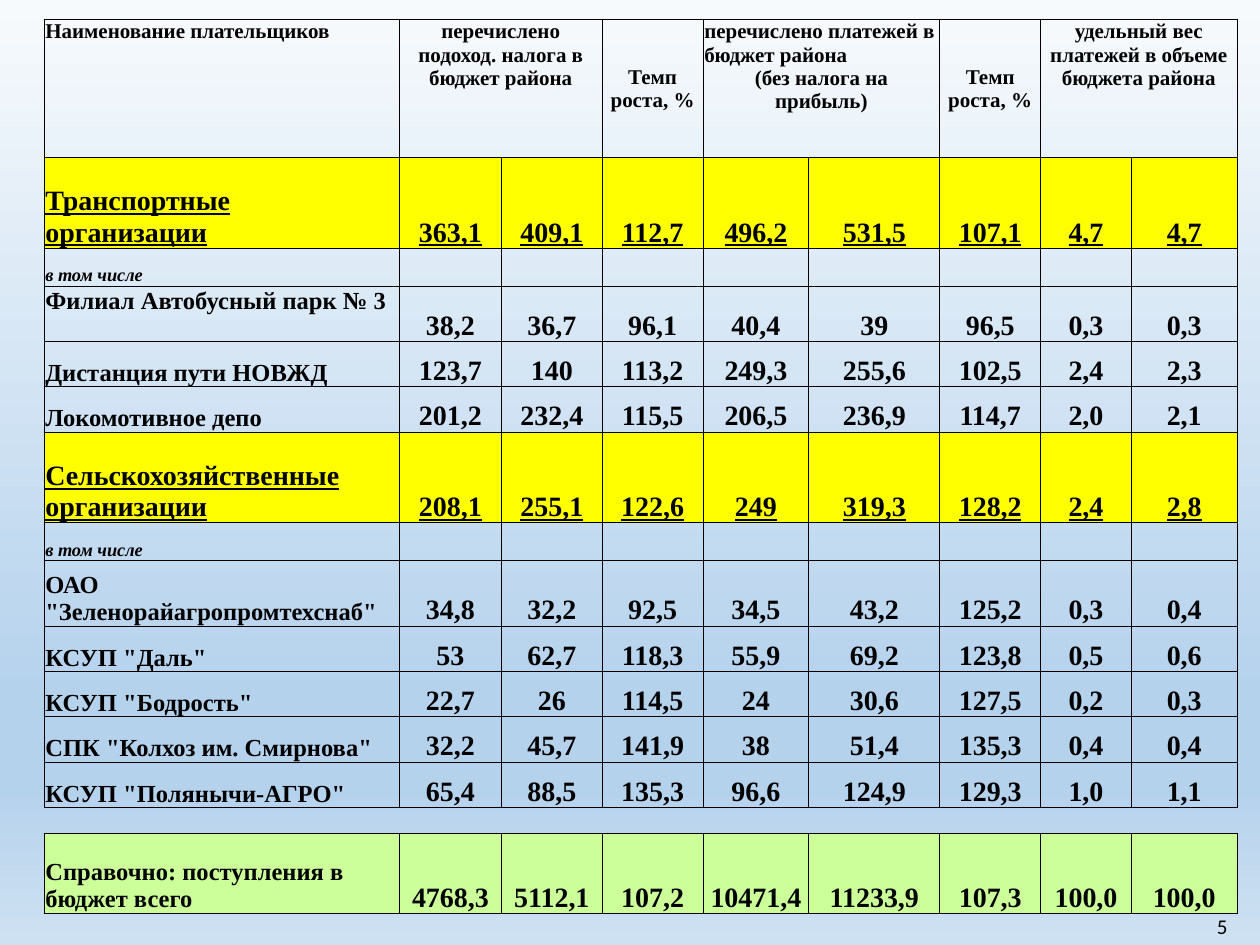
from lxml import etree
from pptx import Presentation
from pptx.dml.color import RGBColor
from pptx.enum.text import MSO_ANCHOR, PP_ALIGN
from pptx.oxml import parse_xml
from pptx.oxml.ns import qn
from pptx.util import Inches, Pt

LEFT, CENTER, RIGHT = PP_ALIGN.LEFT, PP_ALIGN.CENTER, PP_ALIGN.RIGHT
TOP, MIDDLE, BOTTOM = MSO_ANCHOR.TOP, MSO_ANCHOR.MIDDLE, MSO_ANCHOR.BOTTOM
BLACK, YELLOW, GREEN = "000000", "FFFF00", "CCFF99"
SERIF, SANS = "Times New Roman", "Calibri"

BACKGROUND = [(0, "F7FAFD"), (74, "B5D2EC"), (83, "B5D2EC"), (100, "CEE1F2")]
COL_WIDTHS = [2.82, 0.81, 0.8, 0.8, 0.84, 1.04, 0.8, 0.72, 0.84]

# Header: column, columns spanned, anchor, paragraphs with their alignment
HEADER_HEIGHT = 1.1
HEADER = [
    (0, 1, TOP, [("Наименование плательщиков", LEFT)]),
    (1, 2, TOP, [("перечислено подоход. налога в бюджет района", CENTER)]),
    (3, 1, MIDDLE, [("Темп роста, %", CENTER)]),
    (4, 2, TOP, [("перечислено платежей в бюджет района", LEFT),
                 ("(без налога на\vприбыль)", CENTER)]),
    (6, 1, MIDDLE, [("Темп роста, %", CENTER)]),
    (7, 2, TOP, [("удельный вес платежей в объеме бюджета района", CENTER)]),
]

# Row kind: label size, underline, italic, fill
KINDS = {
    "group": (16, True, False, YELLOW),
    "note": (10.5, False, True, None),
    "item": (14, False, False, None),
    "gap": (8, False, False, None),
    "total": (14, False, False, GREEN),
}
# Body: kind, height, label, values
BODY = [
    ("group", 0.72, "Транспортные организации",
     "363,1 409,1 112,7 496,2 531,5 107,1 4,7 4,7"),
    ("note", 0.3, "в том числе", ""),
    ("item", 0.44, "Филиал Автобусный парк № 3",
     "38,2 36,7 96,1 40,4 39 96,5 0,3 0,3"),
    ("item", 0.36, "Дистанция пути НОВЖД",
     "123,7 140 113,2 249,3 255,6 102,5 2,4 2,3"),
    ("item", 0.36, "Локомотивное депо",
     "201,2 232,4 115,5 206,5 236,9 114,7 2,0 2,1"),
    ("group", 0.72, "Сельскохозяйственные организации",
     "208,1 255,1 122,6 249 319,3 128,2 2,4 2,8"),
    ("note", 0.3, "в том числе", ""),
    ("item", 0.52, 'ОАО "Зеленорайагропромтехснаб"',
     "34,8 32,2 92,5 34,5 43,2 125,2 0,3 0,4"),
    ("item", 0.36, 'КСУП "Даль"', "53 62,7 118,3 55,9 69,2 123,8 0,5 0,6"),
    ("item", 0.36, 'КСУП "Бодрость"', "22,7 26 114,5 24 30,6 127,5 0,2 0,3"),
    ("item", 0.36, 'СПК "Колхоз им. Смирнова"',
     "32,2 45,7 141,9 38 51,4 135,3 0,4 0,4"),
    ("item", 0.36, 'КСУП "Полянычи-АГРО"',
     "65,4 88,5 135,3 96,6 124,9 129,3 1,0 1,1"),
    ("gap", 0.21, "", ""),
    ("total", 0.63, "Справочно: поступления в бюджет всего",
     "4768,3 5112,1 107,2 10471,4 11233,9 107,3 100,0 100,0"),
]
TOP_LABEL_ROW = 3  # the only body label set at the top of its cell


def rgb(color):
    return RGBColor.from_string(color)


def set_background(slide):
    fill = slide.background.fill
    fill.gradient()
    grad = slide.background._cSld.find(".//" + qn("a:gradFill"))
    stops = "".join(f'<a:gs pos="{pos * 1000}"><a:srgbClr val="{color}"/></a:gs>'
                    for pos, color in BACKGROUND)
    ns = "http://schemas.openxmlformats.org/drawingml/2006/main"
    grad.getparent().replace(grad, parse_xml(
        f'<a:gradFill xmlns:a="{ns}" rotWithShape="1"><a:gsLst>{stops}</a:gsLst>'
        '<a:lin ang="5400000" scaled="0"/></a:gradFill>'))


def format_paragraph(p, align, size, name=SERIF, bold=True, underline=False, italic=False):
    p.alignment = align
    f = p.font
    f.name, f.size, f.bold = name, Pt(size), bold
    f.underline, f.italic = underline, italic
    f.color.rgb = rgb(BLACK)


def set_borders(cell, sides):
    tc_pr = cell._tc.get_or_add_tcPr()
    for side in "LRTB":
        ln = etree.SubElement(tc_pr, qn(f"a:ln{side}"), w=str(Pt(0.5)))
        if side in sides:
            fill = etree.SubElement(ln, qn("a:solidFill"))
            etree.SubElement(fill, qn("a:srgbClr"), val=BLACK)
        else:
            etree.SubElement(ln, qn("a:noFill"))


def format_cell(cell, anchor, fill=None, sides="LRTB"):
    cell.margin_left = cell.margin_right = cell.margin_top = Inches(0.01)
    cell.margin_bottom = 0
    cell.vertical_anchor = anchor
    set_borders(cell, sides)
    if fill:
        cell.fill.solid()
        cell.fill.fore_color.rgb = rgb(fill)
    else:
        cell.fill.background()


def fill_header(table):
    for col, span, anchor, paragraphs in HEADER:
        for c in range(col, col + span):
            format_cell(table.cell(0, c), anchor)
        cell = table.cell(0, col)
        if span > 1:
            cell.merge(table.cell(0, col + span - 1))
        tf = cell.text_frame
        for i, (text, align) in enumerate(paragraphs):
            p = tf.add_paragraph() if i else tf.paragraphs[0]
            p.text = text
            format_paragraph(p, align, 12)


def fill_row(table, row, kind, label, values):
    label_size, underline, italic, fill = KINDS[kind]
    texts = [label] + (values.split() or [""] * (len(COL_WIDTHS) - 1))
    for col, text in enumerate(texts):
        cell = table.cell(row, col)
        anchor = TOP if (row, col) == (TOP_LABEL_ROW, 0) else BOTTOM
        format_cell(cell, anchor, fill, "TB" if kind == "gap" else "LRTB")
        p = cell.text_frame.paragraphs[0]
        p.text = text
        size = 16 if col and text else label_size
        format_paragraph(p, LEFT if col == 0 else CENTER, size,
                         underline=underline, italic=italic)


def add_payments_table(slide, left, top, width, height):
    heights = [HEADER_HEIGHT] + [row[1] for row in BODY]
    table = slide.shapes.add_table(len(heights), len(COL_WIDTHS),
                                   left, top, width, height).table
    table.first_row = table.horz_banding = False
    for column, w in zip(table.columns, COL_WIDTHS):
        column.width = Inches(w)
    for row, h in zip(table.rows, heights):
        row.height = Inches(h)
    fill_header(table)
    for i, (kind, _, label, values) in enumerate(BODY, start=1):
        fill_row(table, i, kind, label, values)


def add_page_number(slide, left, top, width, height):
    tf = slide.shapes.add_textbox(left, top, width, height).text_frame
    tf.word_wrap = True
    tf.vertical_anchor = MIDDLE
    p = tf.paragraphs[0]
    p.text = "5"
    format_paragraph(p, RIGHT, 12, name=SANS, bold=False)


def main():
    prs = Presentation()
    prs.slide_width, prs.slide_height = Inches(10), Inches(7.5)
    slide = prs.slides.add_slide(prs.slide_layouts[6])
    set_background(slide)
    add_payments_table(slide, Inches(0.35), Inches(0.15), Inches(9.45), Inches(7.1))
    add_page_number(slide, Inches(9.54), Inches(7.15), Inches(0.3), Inches(0.4))
    prs.save("out.pptx")


if __name__ == "__main__":
    main()
